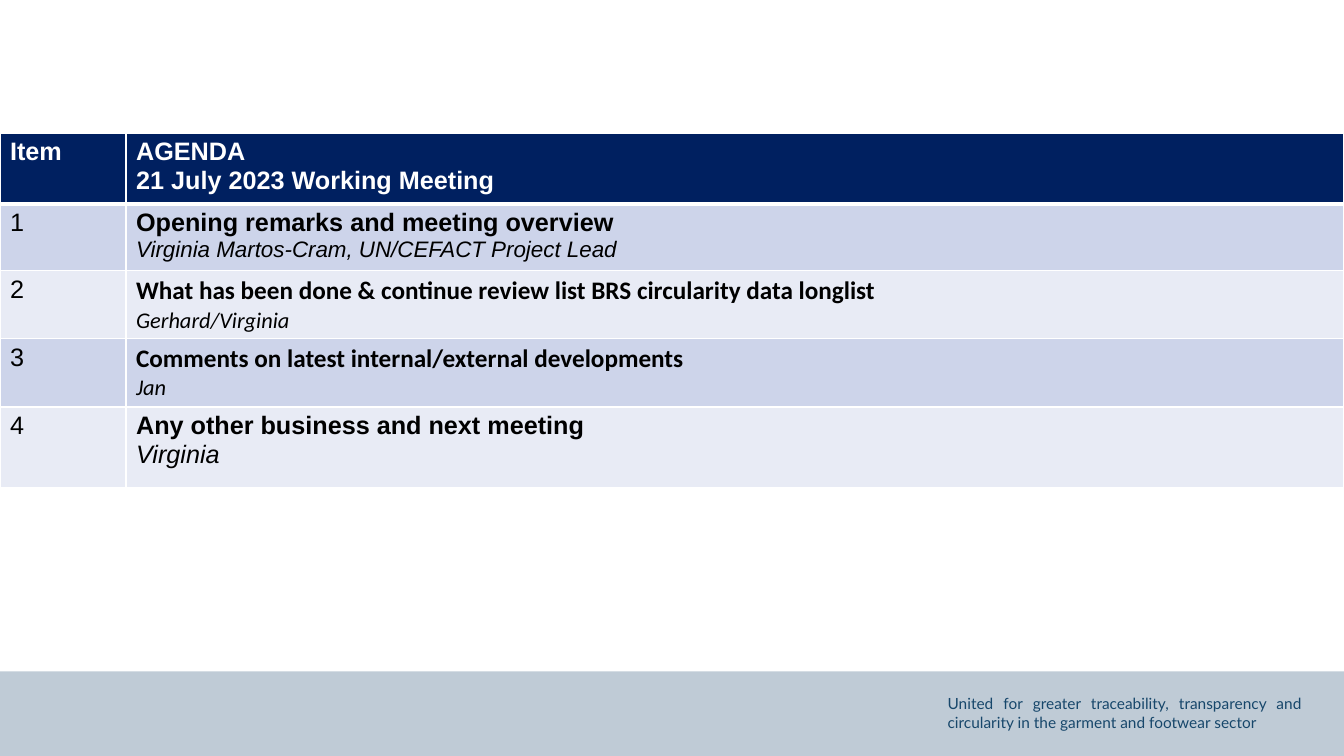
from lxml.etree import SubElement
from pptx import Presentation
from pptx.dml.color import RGBColor
from pptx.enum.shapes import MSO_SHAPE
from pptx.enum.text import PP_ALIGN
from pptx.oxml.ns import qn
from pptx.util import Inches, Pt

COLORS = {
    "white": "FFFFFF",
    "black": "000000",
    "header": "002060",
    "odd_row": "CDD4EA",
    "even_row": "E8EBF5",
    "footer_band": "BFCBD6",
    "footer_text": "17476B",
}
COLUMN_WIDTHS = [1.25, 12.08]
ROW_HEIGHTS = [0.67, 0.64, 0.67, 0.68, 0.8]
AGENDA = [
    ("Opening remarks and meeting overview", "Virginia Martos-Cram, UN/CEFACT Project Lead", "Arial", 16),
    ("What has been done & continue review list BRS circularity data longlist", "Gerhard/Virginia", "Calibri", 16),
    ("Comments on latest internal/external developments", "Jan", "Calibri", 16),
    ("Any other business and next meeting", "Virginia", "Arial", 18),
]


class AgendaSlide:
    """Holds the style and the current slide, and draws its elements."""

    def __init__(self, presentation):
        """Add a blank slide to the presentation."""
        self.slide = presentation.slides.add_slide(presentation.slide_layouts[6])

    def color(self, name):
        """Return a named colour."""
        return RGBColor.from_string(COLORS[name])

    def format_paragraph(self, paragraph, font, size, color, bold=False, italic=False):
        """Format every run of a paragraph."""
        for run in paragraph.runs:
            run.font.name = font
            run.font.size = Pt(size)
            run.font.color.rgb = self.color(color)
            run.font.bold = bold
            run.font.italic = italic

    def band(self, left, top, width, height, color):
        """Draw a plain filled rectangle."""
        shape = self.slide.shapes.add_shape(
            MSO_SHAPE.RECTANGLE, Inches(left), Inches(top), Inches(width), Inches(height))
        shape.shadow.inherit = False
        shape.fill.solid()
        shape.fill.fore_color.rgb = self.color(color)
        shape.line.fill.background()

    def text(self, left, top, width, height, text):
        """Add the justified footer text."""
        shape = self.slide.shapes.add_textbox(
            Inches(left), Inches(top), Inches(width), Inches(height))
        shape.text_frame.word_wrap = True
        shape.text_frame.text = text
        paragraph = shape.text_frame.paragraphs[0]
        paragraph.alignment = PP_ALIGN.JUSTIFY
        self.format_paragraph(paragraph, "Lato", 11, "footer_text")

    def borders(self, cell, top, bottom):
        """Give a cell white borders with the stated top and bottom widths."""
        properties = cell._tc.get_or_add_tcPr()
        for tag, width in (("a:lnL", 1), ("a:lnR", 1), ("a:lnT", top), ("a:lnB", bottom)):
            line = SubElement(properties, qn(tag), w=str(Pt(width)))
            fill = SubElement(line, qn("a:solidFill"))
            SubElement(fill, qn("a:srgbClr"), val=COLORS["white"])

    def cell(self, cell, row, lines):
        """Fill a cell with lines, each a text and its format."""
        self.borders(cell, 3 if row == 1 else 1, 3 if row == 0 else 1)
        cell.fill.solid()
        fill_name = "header" if row == 0 else "odd_row" if row % 2 else "even_row"
        cell.fill.fore_color.rgb = self.color(fill_name)
        cell.text_frame.text = "\n".join(text for text, _ in lines)
        for paragraph, (_, style) in zip(cell.text_frame.paragraphs, lines):
            self.format_paragraph(paragraph, **style)

    def table(self, left, top, rows):
        """Add the agenda table."""
        table = self.slide.shapes.add_table(
            len(rows), len(COLUMN_WIDTHS), Inches(left), Inches(top),
            Inches(sum(COLUMN_WIDTHS)), Inches(sum(ROW_HEIGHTS))).table
        for column, width in zip(table.columns, COLUMN_WIDTHS):
            column.width = Inches(width)
        for row_index, (row, height) in enumerate(zip(rows, ROW_HEIGHTS)):
            table.rows[row_index].height = Inches(height)
            for column_index, lines in enumerate(row):
                self.cell(table.cell(row_index, column_index), row_index, lines)


def agenda_rows():
    """Return the table rows as formatted lines."""
    heading = dict(font="Arial", size=18, color="white", bold=True)
    number_style = dict(font="Arial", size=18, color="black")
    rows = [([("Item", heading)],
             [("AGENDA", heading), ("21 July 2023 Working Meeting", heading)])]
    for number, (topic, speaker, font, speaker_size) in enumerate(AGENDA, 1):
        topic_style = dict(font=font, size=18, color="black", bold=True)
        speaker_style = dict(font=font, size=speaker_size, color="black", italic=True)
        rows.append(([(str(number), number_style)],
                     [(topic, topic_style), (speaker, speaker_style)]))
    return rows


def main():
    """Build and save the agenda slide."""
    presentation = Presentation()
    presentation.slide_width = Inches(13.33)
    presentation.slide_height = Inches(7.5)
    agenda = AgendaSlide(presentation)
    agenda.band(0, 6.66, 13.33, 0.84, "footer_band")
    agenda.text(9.3, 6.84, 3.71, 0.47,
                "United for greater traceability, transparency and "
                "circularity in the garment and footwear sector")
    agenda.table(0, 1.32, agenda_rows())
    presentation.save("out.pptx")


if __name__ == "__main__":
    main()
